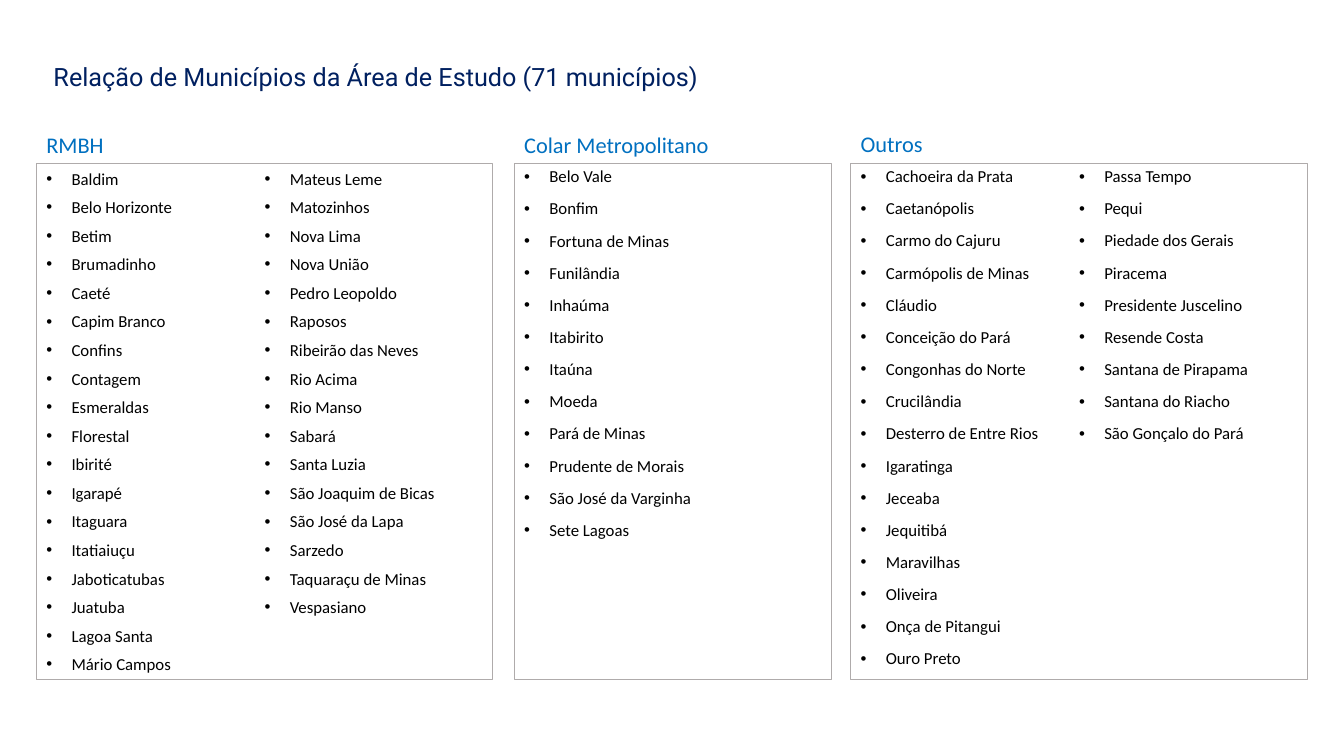
"""Build the slide listing the 71 municipalities of the study area."""
from dataclasses import dataclass

from lxml.etree import SubElement
from pptx import Presentation
from pptx.dml.color import RGBColor
from pptx.enum.text import MSO_ANCHOR, MSO_AUTO_SIZE, PP_ALIGN
from pptx.oxml.ns import qn
from pptx.util import Pt

TITLE = "Relação de Municípios da Área de Estudo (71 municípios)"

GROUPS = [
    {
        "heading": "RMBH", "anchor": MSO_ANCHOR.TOP,
        "left": 25.9, "width": 326.2, "columns": 2,
        "spacing": (1.0, 3, 3),
        "towns": [
            "Baldim", "Belo Horizonte", "Betim", "Brumadinho", "Caeté",
            "Capim Branco", "Confins", "Contagem", "Esmeraldas", "Florestal",
            "Ibirité", "Igarapé", "Itaguara", "Itatiaiuçu", "Jaboticatubas",
            "Juatuba", "Lagoa Santa", "Mário Campos", "Mateus Leme",
            "Matozinhos", "Nova Lima", "Nova União", "Pedro Leopoldo",
            "Raposos", "Ribeirão das Neves", "Rio Acima", "Rio Manso",
            "Sabará", "Santa Luzia", "São Joaquim de Bicas",
            "São José da Lapa", "Sarzedo", "Taquaraçu de Minas", "Vespasiano",
        ],
    },
    {
        "heading": "Colar Metropolitano", "anchor": MSO_ANCHOR.TOP,
        "left": 367.2, "width": 226.8, "columns": 1,
        "spacing": (0.9, 10, 0),
        "towns": [
            "Belo Vale", "Bonfim", "Fortuna de Minas", "Funilândia", "Inhaúma",
            "Itabirito", "Itaúna", "Moeda", "Pará de Minas",
            "Prudente de Morais", "São José da Varginha", "Sete Lagoas",
        ],
    },
    {
        "heading": "Outros", "anchor": MSO_ANCHOR.MIDDLE,
        "left": 607.7, "width": 326.2, "columns": 2,
        "spacing": (0.9, 10, 0),
        "towns": [
            "Cachoeira da Prata", "Caetanópolis", "Carmo do Cajuru",
            "Carmópolis de Minas", "Cláudio", "Conceição do Pará",
            "Congonhas do Norte", "Crucilândia", "Desterro de Entre Rios",
            "Igaratinga", "Jeceaba", "Jequitibá", "Maravilhas", "Oliveira",
            "Onça de Pitangui", "Ouro Preto", "Passa Tempo", "Pequi",
            "Piedade dos Gerais", "Piracema", "Presidente Juscelino",
            "Resende Costa", "Santana de Pirapama", "Santana do Riacho",
            "São Gonçalo do Pará",
        ],
    },
]


@dataclass(frozen=True)
class Theme:
    title: tuple = ("Roboto", 18, RGBColor(0x00, 0x20, 0x60))
    heading: tuple = ("Calibri", 16, RGBColor(0x00, 0x70, 0xC0))
    town: tuple = ("Calibri", 12, RGBColor(0x00, 0x00, 0x00))
    panel: RGBColor = RGBColor(0xFF, 0xFF, 0xFF)
    border: RGBColor = RGBColor(0xAF, 0xAB, 0xAB)


THEME = Theme()
HEADING_TOP, HEADING_HEIGHT = 92.2, 23.8
LIST_TOP, LIST_HEIGHT = 116.6, 368.6
INDENT = 18


def place(box, left, top, width, height, anchor=MSO_ANCHOR.TOP, bottom=3.6):
    box.left, box.top, box.width, box.height = map(Pt, (left, top, width, height))
    frame = box.text_frame
    frame.word_wrap = True
    frame.auto_size = MSO_AUTO_SIZE.NONE
    frame.vertical_anchor = anchor
    frame.margin_left = frame.margin_right = Pt(7.2)
    frame.margin_top, frame.margin_bottom = Pt(3.6), Pt(bottom)


def write(box, lines, style, spacing=(1.0, 0, 0), indent=0):
    name, size, color = style
    line_spacing, before, after = spacing
    for index, line in enumerate(lines):
        frame = box.text_frame
        para = frame.add_paragraph() if index else frame.paragraphs[0]
        properties = para._p.get_or_add_pPr()
        properties.set("marL", str(Pt(indent)))
        properties.set("indent", str(-Pt(indent)))
        if indent:
            SubElement(properties, qn("a:buFont"), typeface="Arial")
            SubElement(properties, qn("a:buChar"), char="•")
        para.alignment = PP_ALIGN.LEFT
        para.line_spacing = line_spacing
        para.space_before = Pt(before if index else 0)
        para.space_after = Pt(after)
        span = para.add_run()
        span.text = line
        span.font.name, span.font.size = name, Pt(size)
        span.font.bold = False
        span.font.color.rgb = color


def add_group(group, heading, panel):
    left, width = group["left"], group["width"]
    place(heading, left, HEADING_TOP, width, HEADING_HEIGHT, group["anchor"])
    write(heading, [group["heading"]], THEME.heading, (0.9, 0, 0))
    place(panel, left, LIST_TOP, width, LIST_HEIGHT, bottom=0)
    panel.fill.solid()
    panel.fill.fore_color.rgb = THEME.panel
    panel.line.color.rgb = THEME.border
    panel.line.width = Pt(0.75)
    panel.text_frame._txBody.bodyPr.set("numCol", str(group["columns"]))
    write(panel, group["towns"], THEME.town, group["spacing"], INDENT)


def main():
    deck = Presentation()
    deck.slide_width, deck.slide_height = Pt(960), Pt(540)
    page = deck.slides.add_slide(deck.slide_layouts.get_by_name("Comparison"))
    title, *boxes = page.placeholders
    while len(boxes) < 2 * len(GROUPS):
        boxes.append(page.shapes.add_textbox(0, 0, 0, 0))
    place(title, 31, 40.3, 514, 28.8)
    write(title, [TITLE], THEME.title)
    for group, heading, panel in zip(GROUPS, boxes[::2], boxes[1::2]):
        add_group(group, heading, panel)
    deck.save("out.pptx")


if __name__ == "__main__":
    main()
